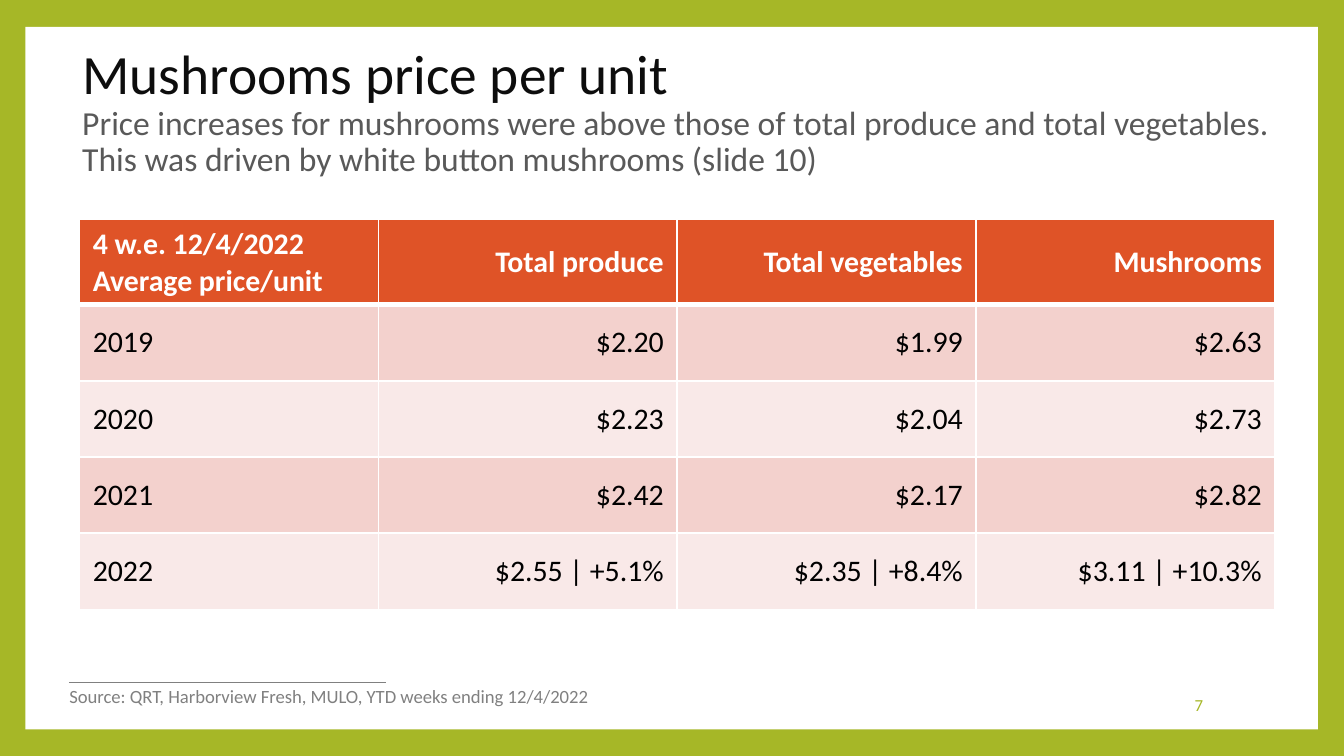
from lxml import etree
from pptx import Presentation
from pptx.dml.color import RGBColor
from pptx.enum.shapes import MSO_CONNECTOR, MSO_SHAPE
from pptx.enum.text import MSO_ANCHOR, MSO_AUTO_SIZE, PP_ALIGN
from pptx.oxml.ns import qn
from pptx.util import Cm, Pt

LEFT, RIGHT = PP_ALIGN.LEFT, PP_ALIGN.RIGHT
TOP, MIDDLE = MSO_ANCHOR.TOP, MSO_ANCHOR.MIDDLE
RECT = MSO_SHAPE.RECTANGLE
STRAIGHT = MSO_CONNECTOR.STRAIGHT
NO_FIT = MSO_AUTO_SIZE.NONE

FONT = "Calibri"
GREEN = RGBColor(0xA6, 0xB7, 0x27)
WHITE = RGBColor(0xFF, 0xFF, 0xFF)
BLACK = RGBColor(0x00, 0x00, 0x00)
INK = RGBColor(0x0D, 0x0D, 0x0D)
SLATE = RGBColor(0x59, 0x59, 0x59)
GRAY = RGBColor(0x80, 0x80, 0x80)
ORANGE = RGBColor(0xDF, 0x53, 0x27)
ROSE = RGBColor(0xF3, 0xD1, 0xCD)
BLUSH = RGBColor(0xF9, 0xE9, 0xE8)

PRICES = [
    ["4 w.e. 12/4/2022\nAverage price/unit", "Total produce", "Total vegetables", "Mushrooms"],
    ["2019", "$2.20", "$1.99", "$2.63"],
    ["2020", "$2.23", "$2.04", "$2.73"],
    ["2021", "$2.42", "$2.17", "$2.82"],
    ["2022", "$2.55 | +5.1%", "$2.35 | +8.4%", "$3.11 | +10.3%"],
]
COL_W, HEAD_H, ROW_H = 5.65, 1.59, 1.44


def add_run(para, text, size=16, color=BLACK, bold=False):
    run = para.add_run()
    run.text = text
    font = run.font
    font.name, font.size, font.bold = FONT, Pt(size), bold
    font.color.rgb = color


def put_text(frame, text, align=LEFT, **style):
    """Fill a text frame, one paragraph for each line."""
    for i, line in enumerate(text.split("\n")):
        para = frame.paragraphs[0] if i == 0 else frame.add_paragraph()
        para.alignment = align
        add_run(para, line, **style)


def add_panel(slide):
    """Lay the white panel behind the title."""
    panel = slide.shapes.add_shape(RECT, Cm(0.48), Cm(0.51), Cm(24.43), Cm(13.28))
    panel.shadow.inherit = False
    panel.fill.solid()
    panel.fill.fore_color.rgb = WHITE
    panel.line.fill.background()
    slide.shapes.title.element.addprevious(panel.element)


def add_rule(slide, x, y, width):
    rule = slide.shapes.add_connector(STRAIGHT, Cm(x), Cm(y), Cm(x + width), Cm(y))
    rule.line.color.rgb = GRAY
    rule.line.width = Pt(0.79)
    etree.SubElement(rule.element.spPr, qn("a:effectLst"))


def set_title(slide, head, sub):
    title = slide.shapes.title
    title.left, title.top, title.width, title.height = Cm(1.3), Cm(1.45), Cm(23.01), Cm(1.37)
    frame = title.text_frame
    frame.word_wrap = True
    frame.auto_size = NO_FIT
    frame.vertical_anchor = MIDDLE
    para = frame.paragraphs[0]
    para.alignment = LEFT
    para.line_spacing = 0.9
    add_run(para, head, size=29.7, color=INK)
    para.add_line_break()
    add_run(para, sub, size=18, color=SLATE)


def add_note(slide, text, x, y, width, height, anchor=TOP, **style):
    box = slide.shapes.add_textbox(Cm(x), Cm(y), Cm(width), Cm(height))
    box.text_frame.word_wrap = True
    box.text_frame.vertical_anchor = anchor
    put_text(box.text_frame, text, **style)


def set_edge(cell, side, width):
    edge = etree.SubElement(cell._tc.get_or_add_tcPr(), qn(f"a:ln{side}"), w=str(Pt(width)))
    fill = etree.SubElement(edge, qn("a:solidFill"))
    etree.SubElement(fill, qn("a:srgbClr"), val=str(WHITE))


def set_cell(cell, text, row, col):
    # Edges must come before the fill in the cell's XML.
    for side in "LRTB":
        thick = (row, side) in ((0, "B"), (1, "T"))
        set_edge(cell, side, 3 if thick else 1)
    cell.fill.solid()
    cell.fill.fore_color.rgb = ORANGE if row == 0 else ROSE if row % 2 else BLUSH
    cell.vertical_anchor = MIDDLE
    put_text(cell.text_frame, text, align=RIGHT if col else LEFT,
             color=BLACK if row else WHITE, bold=row == 0)


def add_prices(slide, x, y):
    rows, cols = len(PRICES), len(PRICES[0])
    height = HEAD_H + ROW_H * (rows - 1)
    table = slide.shapes.add_table(
        rows, cols, Cm(x), Cm(y), Cm(COL_W * cols), Cm(height)).table
    for col in table.columns:
        col.width = Cm(COL_W)
    for r, texts in enumerate(PRICES):
        table.rows[r].height = Cm(ROW_H if r else HEAD_H)
        for c, text in enumerate(texts):
            set_cell(table.cell(r, c), text, r, c)


def main():
    deck = Presentation()
    deck.slide_width, deck.slide_height = Cm(25.4), Cm(14.29)
    slide = deck.slides.add_slide(deck.slide_layouts[5])
    slide.background.fill.solid()
    slide.background.fill.fore_color.rgb = GREEN

    add_panel(slide)
    add_rule(slide, 1.3, 12.9, 6)
    set_title(slide, "Mushrooms price per unit",
              "Price increases for mushrooms were above those of total produce and "
              "total vegetables. This was driven by white button mushrooms (slide 10)")
    add_note(slide, "7", 19.43, 12.95, 3.56, 0.76, anchor=MIDDLE,
             align=RIGHT, size=9, color=GREEN)
    add_note(slide, "Source: QRT, Harborview Fresh, MULO, YTD weeks ending 12/4/2022",
             1.06, 12.83, 10.41, 0.69, size=10, color=GRAY)
    add_prices(slide, 1.5, 4.15)
    deck.save("out.pptx")


if __name__ == "__main__":
    main()
